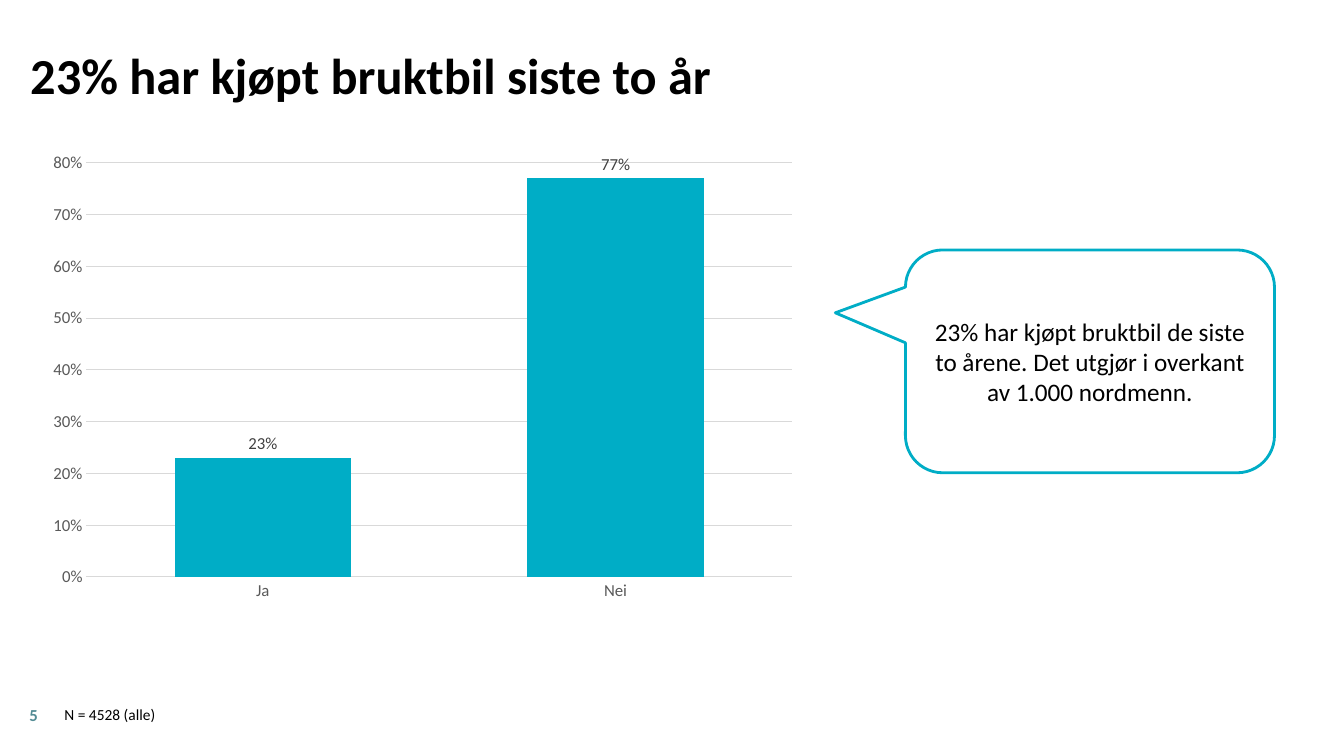
from dataclasses import dataclass

from lxml import etree
from pptx import Presentation
from pptx.chart.data import CategoryChartData
from pptx.dml.color import RGBColor
from pptx.enum.chart import XL_CHART_TYPE, XL_LABEL_POSITION, XL_TICK_MARK
from pptx.enum.shapes import MSO_SHAPE
from pptx.enum.text import MSO_ANCHOR, MSO_AUTO_SIZE, PP_ALIGN
from pptx.oxml.ns import qn
from pptx.util import Inches, Pt

COLUMNS = XL_CHART_TYPE.COLUMN_CLUSTERED
OUTSIDE_END = XL_LABEL_POSITION.OUTSIDE_END
NO_TICK = XL_TICK_MARK.NONE
CALLOUT = MSO_SHAPE.ROUNDED_RECTANGULAR_CALLOUT
MIDDLE, BOTTOM, TOP = MSO_ANCHOR.MIDDLE, MSO_ANCHOR.BOTTOM, MSO_ANCHOR.TOP
LEFT, CENTER = PP_ALIGN.LEFT, PP_ALIGN.CENTER
NO_AUTOFIT = MSO_AUTO_SIZE.NONE


@dataclass(frozen=True)
class Theme:
    face: str = "Calibri"
    ink: RGBColor = RGBColor(0x00, 0x00, 0x00)
    paper: RGBColor = RGBColor(0xFF, 0xFF, 0xFF)
    accent: RGBColor = RGBColor(0x00, 0xAD, 0xC6)
    page: RGBColor = RGBColor(0x54, 0x8C, 0x95)
    axis: RGBColor = RGBColor(0x59, 0x59, 0x59)
    label: RGBColor = RGBColor(0x40, 0x40, 0x40)
    grid: RGBColor = RGBColor(0xD9, 0xD9, 0xD9)
    title_size: int = 36
    comment_size: int = 18
    small_size: int = 12
    note_size: int = 11
    thin: float = 0.75
    thick: float = 2


theme = Theme()
deck = Presentation()
deck.slide_width, deck.slide_height = Inches(13.33), Inches(7.5)
slide = deck.slides.add_slide(deck.slide_layouts[5])


def place(*percents):
    sides = (deck.slide_width, deck.slide_height) * 2
    return [int(side * percent / 100) for side, percent in zip(sides, percents)]


def write(holder, text, size, color=theme.ink, bold=False, align=LEFT,
          anchor=TOP, spacing=None, inset=True):
    frame = holder.text_frame
    frame.word_wrap = True
    frame.auto_size = NO_AUTOFIT
    frame.vertical_anchor = anchor
    if not inset:
        frame.margin_left = frame.margin_right = 0
        frame.margin_top = frame.margin_bottom = 0
    frame.text = text
    paragraph = frame.paragraphs[0]
    paragraph.alignment = align
    paragraph.line_spacing = spacing
    font = paragraph.runs[0].font
    font.name, font.size, font.bold = theme.face, Pt(size), bold
    font.color.rgb = color


heading = slide.shapes.title
heading.left, heading.top, heading.width, heading.height = place(2.25, 4.53, 95.8, 9.33)
write(heading, "23% har kjøpt bruktbil siste to år", theme.title_size,
      bold=True, anchor=BOTTOM, spacing=1.1, inset=False)

answers = CategoryChartData(number_format="0%")
answers.categories = ["Ja", "Nei"]
answers.add_series("Series 1", [0.23, 0.77])
chart = slide.shapes.add_chart(COLUMNS, *place(2.18, 18.93, 59.11, 62.4), answers).chart
chart.has_legend = False
chart.has_title = False
chart.font.name = theme.face
chart.font.size = Pt(theme.small_size)
chart.font.color.rgb = theme.axis

plot = chart.plots[0]
plot.gap_width = plot.overlap = 100
plot.vary_by_categories = False
bars = plot.series[0].format.fill
bars.solid()
bars.fore_color.rgb = theme.accent

plot.has_data_labels = True
shares = plot.data_labels
shares.show_value = True
shares.position = OUTSIDE_END
shares.number_format, shares.number_format_is_linked = "0%", False
shares.font.name, shares.font.size = theme.face, Pt(theme.small_size)
shares.font.color.rgb = theme.label

scale = chart.value_axis
scale.minimum_scale, scale.maximum_scale, scale.major_unit = 0, 0.8, 0.1
scale.tick_labels.number_format = "0%"
scale.tick_labels.number_format_is_linked = False
scale.format.line.fill.background()
for axis in (scale, chart.category_axis):
    axis.major_tick_mark = axis.minor_tick_mark = NO_TICK
    axis.tick_labels.font.name = theme.face
    axis.tick_labels.font.size = Pt(theme.small_size)
    axis.tick_labels.font.color.rgb = theme.axis
for rule in (scale.major_gridlines.format.line, chart.category_axis.format.line):
    rule.color.rgb = theme.grid
    rule.width = Pt(theme.thin)

plot_area = chart.element.find(".//" + qn("c:plotArea"))
for old_layout in plot_area.findall(qn("c:layout")):
    plot_area.remove(old_layout)
layout = etree.Element(qn("c:layout"))
plot_area.insert(0, layout)
manual = etree.SubElement(layout, qn("c:manualLayout"))
for tag, value in (("layoutTarget", "inner"), ("xMode", "edge"), ("yMode", "edge"),
                   ("x", "0.072"), ("y", "0.042"), ("w", "0.888"), ("h", "0.878")):
    etree.SubElement(manual, qn("c:" + tag), val=value)

comment = slide.shapes.add_shape(CALLOUT, *place(67.37, 33.07, 27.46, 29.47))
comment.shadow.inherit = False
for index, share in enumerate((-0.69, -0.218, 0.167)):
    comment.adjustments[index] = share
comment.fill.solid()
comment.fill.fore_color.rgb = theme.paper
comment.line.color.rgb = theme.accent
comment.line.width = Pt(theme.thick)
write(comment, "23% har kjøpt bruktbil de siste to årene. "
      "Det utgjør i overkant av 1.000 nordmenn.",
      theme.comment_size, align=CENTER, anchor=MIDDLE)

page_number = slide.shapes.add_textbox(*place(2.18, 93.2, 1.88, 2.67))
write(page_number, "5", theme.small_size, color=theme.page, bold=True,
      anchor=MIDDLE, inset=False)

sample_note = slide.shapes.add_textbox(*place(4.05, 92.67, 91.3, 3.87))
write(sample_note, "N = 4528 (alle)", theme.note_size)

deck.save("out.pptx")
